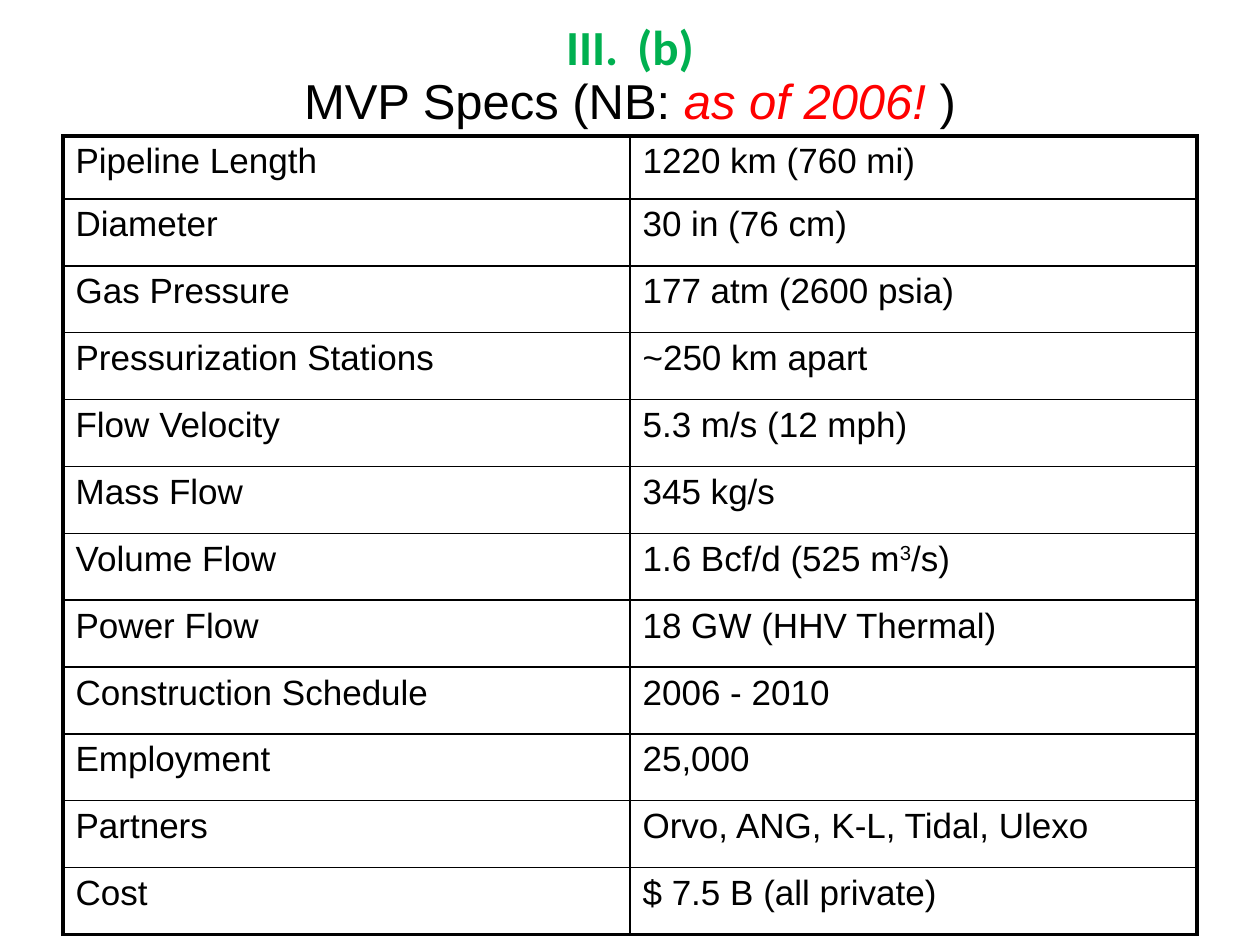
from pptx import Presentation
from pptx import util as u
from pptx.dml.color import RGBColor
from pptx.enum import text
from pptx.oxml import parse_xml
from pptx.oxml.ns import nsdecls

BLACK = RGBColor(0, 0, 0)
RED = RGBColor(255, 0, 0)
GREEN = RGBColor(0, 176, 80)
THIN, THICK = 1, 2.25

SPECS = [
    ("Pipeline Length", "1220 km (760 mi)"),
    ("Diameter", "30 in (76 cm)"),
    ("Gas Pressure", "177 atm (2600 psia)"),
    ("Pressurization Stations", "~250 km apart"),
    ("Flow Velocity", "5.3 m/s (12 mph)"),
    ("Mass Flow", "345 kg/s"),
    ("Volume Flow", "1.6 Bcf/d (525 m^3^/s)"),
    ("Power Flow", "18 GW (HHV Thermal)"),
    ("Construction Schedule", "2006 - 2010"),
    ("Employment", "25,000"),
    ("Partners", "Orvo, ANG, K-L, Tidal, Ulexo"),
    ("Cost", "$ 7.5 B (all private)"),
]


class Deck:
    head = {"name": "Arial", "size": u.Pt(28)}
    body = {"name": "Arial", "size": u.Pt(20)}
    mark = {"name": "Calibri", "size": u.Pt(28), "bold": True}

    def __init__(self, slide):
        self.slide = slide

    def run(self, para, words, style, color=BLACK, **extra):
        run = para.add_run()
        run.text = words
        for key, value in {**style, **extra}.items():
            setattr(run.font, key, value)
        run.font.color.rgb = color
        return run

    def title(self, box, parts):
        shape = self.slide.shapes.title
        for key, value in zip(("left", "top", "width", "height"), box):
            setattr(shape, key, u.Cm(value))
        frame = shape.text_frame
        frame.vertical_anchor = text.MSO_ANCHOR.MIDDLE
        para = frame.paragraphs[0]
        para.alignment = text.PP_ALIGN.CENTER
        for words, color, slant in parts:
            self.run(para, words, self.head, color, italic=slant)

    def number(self, box, words, start):
        frame = self.slide.shapes.add_textbox(*map(u.Cm, box)).text_frame
        frame.word_wrap = True
        frame.auto_size = text.MSO_AUTO_SIZE.SHAPE_TO_FIT_TEXT
        para = frame.paragraphs[0]
        para.alignment = text.PP_ALIGN.CENTER
        props = para._p.get_or_add_pPr()
        indent = u.Cm(1.43)
        props.set("marL", str(indent))
        props.set("indent", str(-indent))
        props.append(parse_xml(
            f'<a:buAutoNum {nsdecls("a")} type="romanUcPeriod" startAt="{start}"/>'))
        self.run(para, words, self.mark, GREEN)

    def border(self, cell, sides):
        props = cell._tc.get_or_add_tcPr()
        for side, width in sides.items():
            props.append(parse_xml(
                f'<a:ln{side} {nsdecls("a")} w="{u.Pt(width)}"><a:solidFill>'
                f'<a:srgbClr val="{BLACK}"/></a:solidFill></a:ln{side}>'))

    def table(self, box, rows, first):
        last, end = len(rows) - 1, len(rows[0]) - 1
        grid = self.slide.shapes.add_table(
            last + 1, end + 1, *map(u.Cm, box)).table
        grid.first_row = grid.horz_banding = False
        rest = (box[3] - first) / last
        for r, row in enumerate(rows):
            grid.rows[r].height = u.Cm(rest if r else first)
            for c, words in enumerate(row):
                cell = grid.cell(r, c)
                edges = {"L": c == 0, "R": c == end, "T": r == 0, "B": r == last}
                self.border(cell, {side: THICK if edge else THIN
                                   for side, edge in edges.items()})
                cell.fill.background()
                para = cell.text_frame.paragraphs[0]
                for n, part in enumerate(words.split("^")):
                    run = self.run(para, part, self.body)
                    if n % 2:
                        run._r.get_or_add_rPr().set("baseline", "30000")


def main():
    show = Presentation()
    show.slide_width, show.slide_height = u.Cm(25.4), u.Cm(19.05)
    deck = Deck(show.slides.add_slide(show.slide_layouts[5]))
    deck.title((1.27, 1.07, 22.86, 1.9), [
        ("MVP Specs (NB: ", BLACK, False),
        ("as of 2006! ", RED, True),
        (")", BLACK, False),
    ])
    deck.table((1.27, 2.74, 22.86, 16.1), SPECS, 1.27)
    deck.number((6.35, 0.2, 12.7, 1.45), "(b)", 3)
    show.save("out.pptx")


if __name__ == "__main__":
    main()
